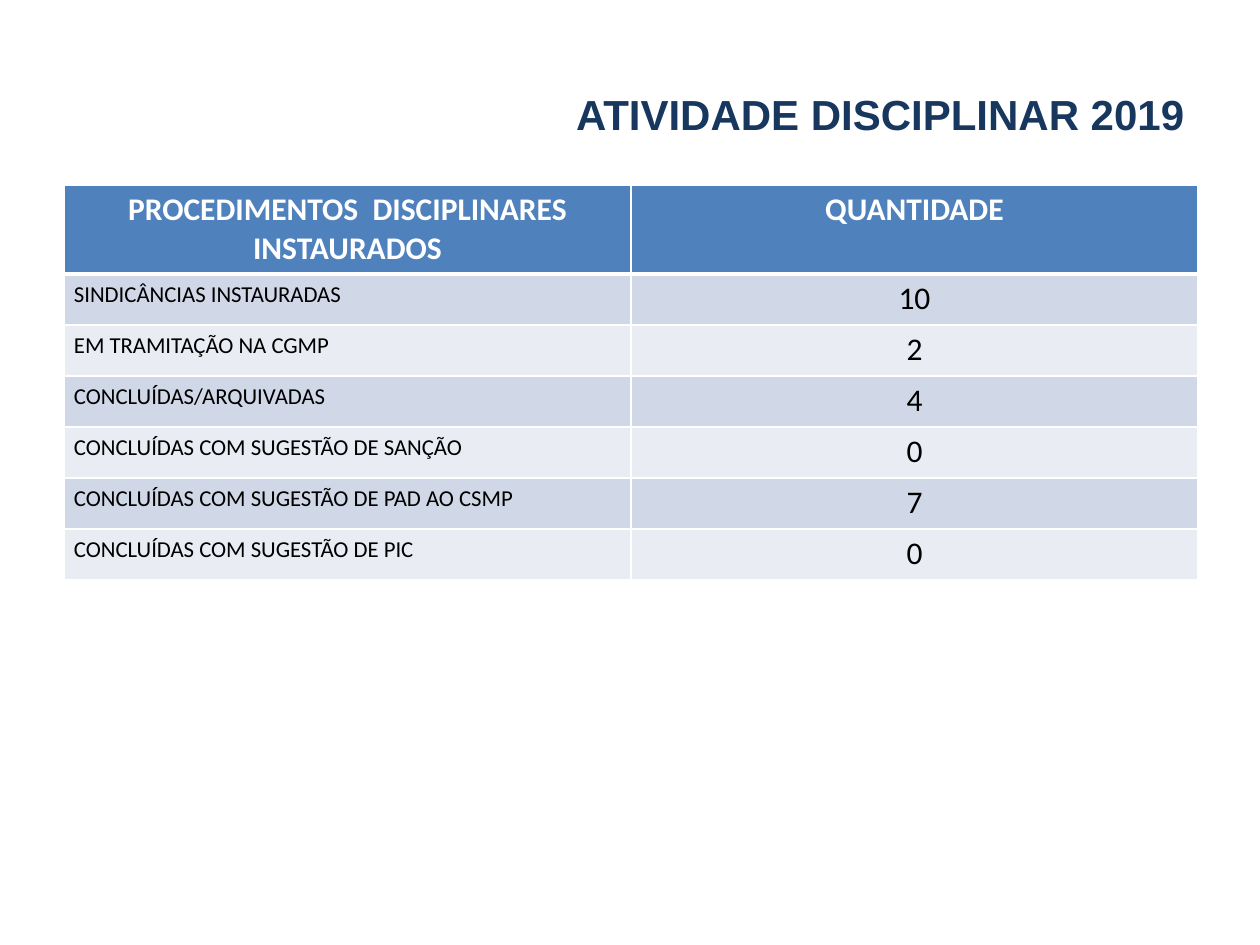
import pptx
import pptx.util
import pptx.dml.color
import pptx.enum.text
import pptx.oxml
import pptx.oxml.ns

SCALE = 914400 / 126  # EMU in one px
ALIGN = pptx.enum.text.PP_ALIGN
ANCHOR = pptx.enum.text.MSO_ANCHOR

HEADS = ["PROCEDIMENTOS  DISCIPLINARES INSTAURADOS", "QUANTIDADE"]
COUNTS = [
    ("SINDICÂNCIAS INSTAURADAS", 10),
    ("EM TRAMITAÇÃO NA CGMP", 2),
    ("CONCLUÍDAS/ARQUIVADAS", 4),
    ("CONCLUÍDAS COM SUGESTÃO DE SANÇÃO", 0),
    ("CONCLUÍDAS COM SUGESTÃO DE PAD AO CSMP", 7),
    ("CONCLUÍDAS COM SUGESTÃO DE PIC", 0),
]


def px(size):
    return pptx.util.Emu(round(size * SCALE))


def color(code):
    return pptx.dml.color.RGBColor.from_string(code)


class Deck:
    navy, blue, white, black = "17375E", "4F81BD", "FFFFFF", "000000"
    bands = ["D0D8E7", "E9ECF3"]
    thin, thick = 0.96, 3

    def __init__(self, wide, high):
        self.show = pptx.Presentation()
        self.show.slide_width, self.show.slide_height = px(wide), px(high)
        self.slide = self.show.slides.add_slide(self.show.slide_layouts[5])

    def style(self, para, face, size, ink, bold, align):
        para.alignment = align
        para.font.name, para.font.size = face, pptx.util.Pt(size)
        para.font.bold, para.font.color.rgb = bold, color(ink)

    def title(self, text, left, top, wide, high):
        box = self.slide.shapes.title
        box.left, box.top, box.width, box.height = map(px, (left, top, wide, high))
        frame = box.text_frame
        frame.text = text
        frame.vertical_anchor = ANCHOR.MIDDLE
        para = frame.paragraphs[0]
        para.line_spacing = 0.93
        self.style(para, "Arial", 24, self.navy, True, ALIGN.RIGHT)

    def border(self, cell, top, low):
        props = cell._tc.get_or_add_tcPr()
        for side, size in zip("LRTB", (self.thin, self.thin, top, low)):
            props.append(pptx.oxml.parse_xml(
                f'<a:ln{side} {pptx.oxml.ns.nsdecls("a")} w="{pptx.util.Pt(size)}">'
                f'<a:solidFill><a:srgbClr val="{self.white}"/></a:solidFill></a:ln{side}>'))

    def cell(self, cell, text, fill, size, ink, bold, align, inset):
        cell.text = text
        cell.margin_left = cell.margin_right = px(inset)
        cell.margin_top = cell.margin_bottom = px(6)
        cell.fill.solid()
        cell.fill.fore_color.rgb = color(fill)
        self.style(cell.text_frame.paragraphs[0], "Calibri", size, ink, bold, align)

    def table(self, heads, rows, left, top, wide, head, step):
        high = head + step * len(rows)
        grid = self.slide.shapes.add_table(
            len(rows) + 1, len(heads), *map(px, (left, top, wide, high))).table
        for index, row in enumerate(grid.rows):
            row.height = px(step if index else head)
            for cell in row.cells:
                self.border(cell, self.thick if index == 1 else self.thin,
                            self.thin if index else self.thick)
        # Header row
        for col, text in enumerate(heads):
            self.cell(grid.cell(0, col), text, self.blue, 18, self.white,
                      True, ALIGN.CENTER, 14)
        # Banded body rows
        for index, (label, count) in enumerate(rows):
            fill = self.bands[index % 2]
            name, value = grid.rows[index + 1].cells
            self.cell(name, label, fill, 13, self.black, False, ALIGN.LEFT, 10)
            name.text_frame.paragraphs[0].line_spacing = 1.02
            self.cell(value, str(count), fill, 18, self.black, False, ALIGN.CENTER, 14)


def main():
    deck = Deck(1260, 945)
    deck.title("ATIVIDADE DISCIPLINAR 2019", 63, 38, 1134, 157)
    deck.table(HEADS, COUNTS, 64, 185, 1134, 89, 51)
    deck.show.save("out.pptx")


if __name__ == "__main__":
    main()
